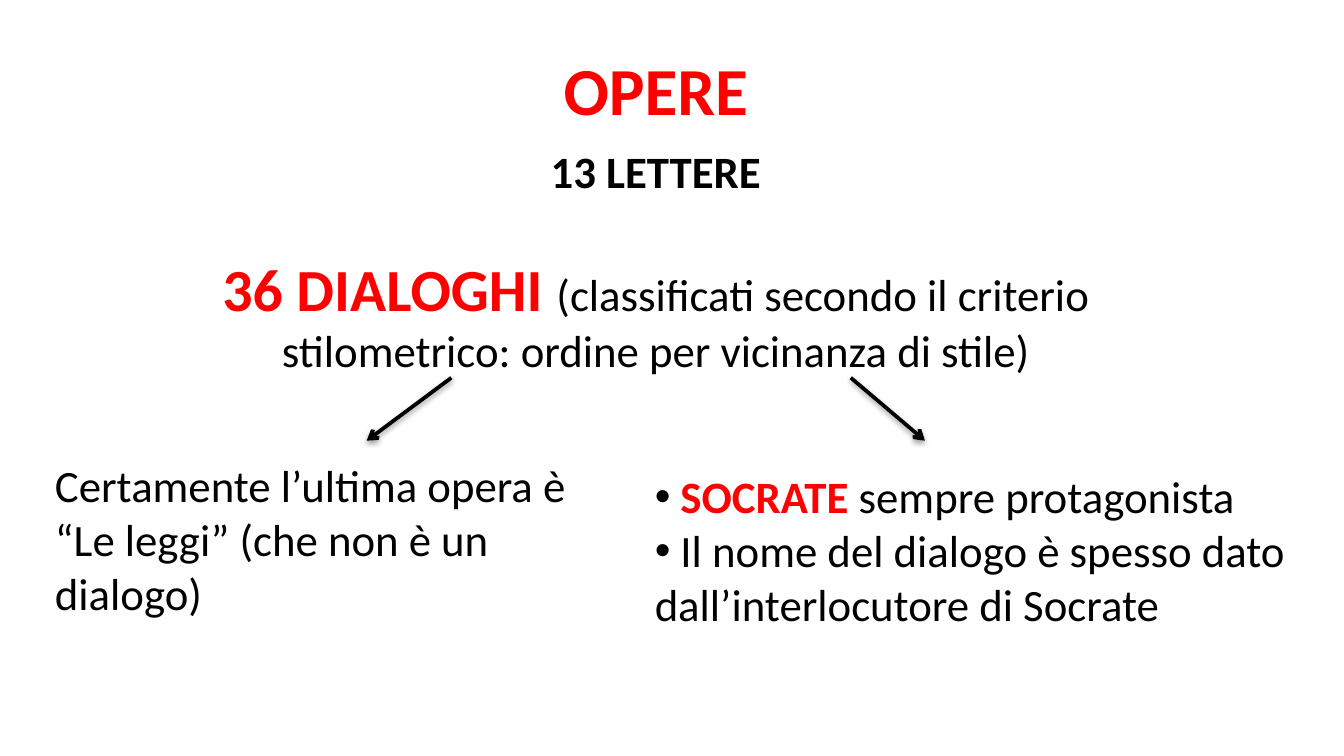
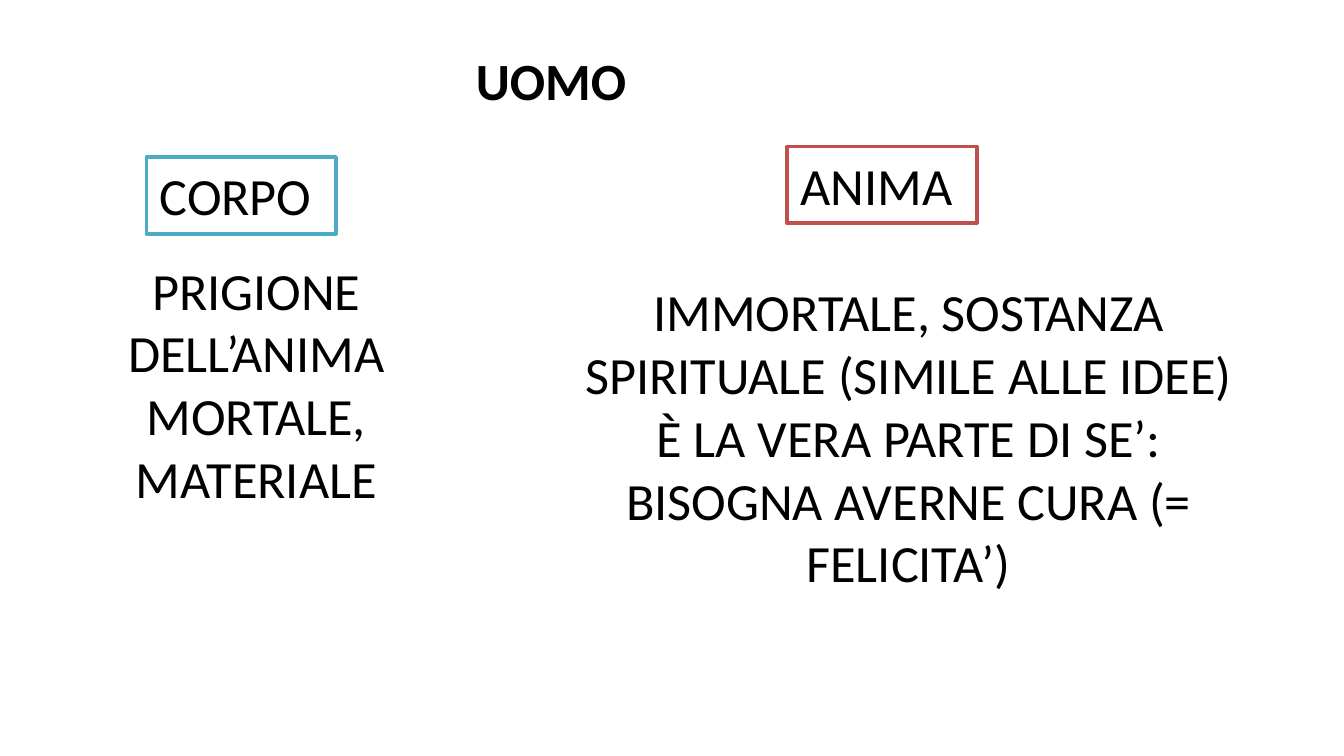
from dataclasses import dataclass

from lxml import etree
from pptx import Presentation
from pptx import util as u
from pptx.dml.color import RGBColor
from pptx.enum import shapes, text
from pptx.oxml import parse_xml
from pptx.oxml.ns import nsdecls, qn

Cm, Pt = u.Cm, u.Pt
LEFT, CENTER = text.PP_ALIGN.LEFT, text.PP_ALIGN.CENTER


@dataclass(frozen=True)
class Theme:
    font: str = "Calibri"
    black: RGBColor = RGBColor(0, 0, 0)
    white: RGBColor = RGBColor(255, 255, 255)
    accent: RGBColor = RGBColor(255, 0, 0)
    body_frame: RGBColor = RGBColor(0x4B, 0xAC, 0xC6)
    soul_frame: RGBColor = RGBColor(0xC0, 0x50, 0x4D)
    main_title: int = 36
    key: int = 32
    large: int = 28
    normal: int = 24
    line: int = 2


T = Theme()
TITLE_AND_BODY, TITLE_ONLY = 1, 5
SHADOW = (
    f'<a:effectLst {nsdecls("a")}>'
    '<a:outerShdw blurRad="40000" dist="20000" dir="5400000" rotWithShape="0">'
    '<a:srgbClr val="000000"><a:alpha val="38000"/></a:srgbClr>'
    '</a:outerShdw></a:effectLst>'
)


def place(sp, box):
    sp.left, sp.top, sp.width, sp.height = (Cm(v) for v in box)


def run(words, size=T.normal, color=T.black, bold=False):
    return words, size, color, bold


def write(sp, paragraphs, align=LEFT, gap=0, bullet=None):
    """Fill a shape with lists of runs; gap is the space between paragraphs in points."""
    tf = sp.text_frame
    tf.word_wrap = True
    tf.auto_size = text.MSO_AUTO_SIZE.SHAPE_TO_FIT_TEXT
    tf.vertical_anchor = text.MSO_ANCHOR.TOP
    for i, runs in enumerate(paragraphs):
        p = tf.paragraphs[0] if i == 0 else tf.add_paragraph()
        if bullet:
            add_bullet(p, bullet)
        p.alignment = align
        p.space_before = Pt(gap if i else 0)
        for words, size, color, bold in runs:
            r = p.add_run()
            r.text = words
            r.font.name = T.font
            r.font.size = Pt(size)
            r.font.bold = bold
            r.font.color.rgb = color


def add_bullet(p, char):
    """Start the bullet at the margin and let wrapped lines return to it."""
    pPr = p._p.get_or_add_pPr()
    pPr.set("marL", "0")
    pPr.set("indent", "0")
    etree.SubElement(pPr, qn("a:buFont"), typeface="Arial")
    etree.SubElement(pPr, qn("a:buChar"), char=char)


def add_title(s, box, title, align):
    place(s.shapes.title, box)
    write(s.shapes.title, [[title]], align)


def add_text(s, box, paragraphs, align=LEFT, gap=0):
    sp = s.shapes.add_textbox(*(Cm(v) for v in box))
    write(sp, paragraphs, align, gap)


def add_list(s, box, items):
    body = s.placeholders[1]
    place(body, box)
    write(body, items, bullet="•")


def add_label(s, left, top, words, frame):
    sp = s.shapes.add_shape(shapes.MSO_SHAPE.RECTANGLE,
                            Cm(left), Cm(top), Cm(3.58), Cm(1.45))
    sp.shadow.inherit = False
    sp.fill.solid()
    sp.fill.fore_color.rgb = T.white
    sp.line.color.rgb = frame
    sp.line.width = Pt(T.line)
    write(sp, [[run(words, T.large)]])


def add_arrow(s, start_x, end_x, top=7.14, bottom=8.33):
    cx = s.shapes.add_connector(shapes.MSO_CONNECTOR.STRAIGHT,
                                Cm(start_x), Cm(top), Cm(end_x), Cm(bottom))
    cx.line.color.rgb = T.black
    cx.line.width = Pt(T.line)
    etree.SubElement(cx.line._get_or_add_ln(), qn("a:tailEnd"), type="arrow")
    cx._element.spPr.append(parse_xml(SHADOW))


def build_works(prs):
    s = prs.slides.add_slide(prs.slide_layouts[TITLE_AND_BODY])
    add_title(s, (3.76, 0.79, 17.27, 1.8),
              run("OPERE", T.main_title, T.accent, True), CENTER)
    add_text(s, (3.76, 2.59, 17.27, 4.7), [
        [run("13 LETTERE", bold=True)],
        [run("36 DIALOGHI ", T.key, T.accent, True),
         run("(classificati secondo il criterio stilometrico: "
             "ordine per vicinanza di stile)")],
    ], CENTER, gap=29)
    add_list(s, (12.12, 8.74, 12.7, 3.33), [
        [run(" "), run("SOCRATE", color=T.accent, bold=True),
         run(" sempre protagonista")],
        [run(" Il nome del dialogo è spesso dato dall’interlocutore di Socrate")],
    ])
    add_text(s, (0.79, 8.53, 10.52, 3.33), [
        [run("Certamente l’ultima opera è “Le leggi” (che non è un dialogo)")],
    ])
    add_arrow(s, 8.53, 6.93)
    add_arrow(s, 16.08, 17.48)


def build_man(prs):
    s = prs.slides.add_slide(prs.slide_layouts[TITLE_ONLY])
    add_title(s, (8.74, 0.79, 9.12, 1.45), run("UOMO", T.large, bold=True), LEFT)
    add_label(s, 14.88, 2.77, "ANIMA", T.soul_frame)
    add_label(s, 2.77, 2.97, "CORPO", T.body_frame)
    add_text(s, (1.57, 4.75, 6.55, 5.05), [
        [run("PRIGIONE DELL’ANIMA", T.large)],
        [run("MORTALE, MATERIALE", T.large)],
    ], CENTER)
    add_text(s, (10.72, 5.16, 12.9, 6.25), [
        [run("IMMORTALE, SOSTANZA SPIRITUALE (SIMILE ALLE IDEE)", T.large)],
        [run("È LA VERA PARTE DI SE’: BISOGNA AVERNE CURA (= FELICITA’)", T.large)],
    ], CENTER)


def main():
    prs = Presentation()
    prs.slide_width, prs.slide_height = Cm(25.4), Cm(14.29)
    build_works(prs)
    build_man(prs)
    prs.save("out.pptx")


if __name__ == "__main__":
    main()
